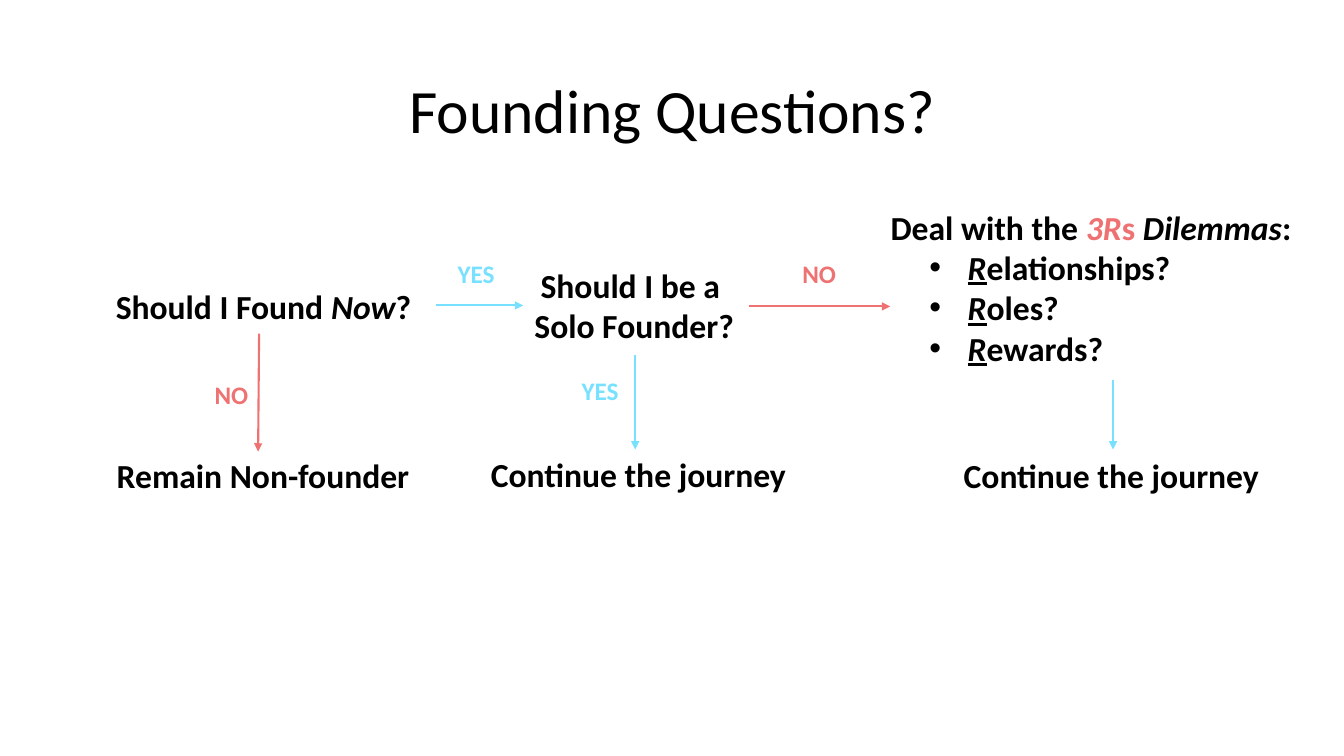
from dataclasses import dataclass

from pptx import Presentation
from pptx.dml.color import RGBColor
from pptx.enum.shapes import MSO_CONNECTOR
from pptx.enum.text import MSO_ANCHOR, MSO_AUTO_SIZE, PP_ALIGN
from pptx.oxml.ns import qn
from pptx.util import Pt
from lxml.etree import SubElement

EMU_PER_PX = 9144


@dataclass(frozen=True)
class Theme:
    """Colours, font and type sizes of the slide."""
    font: str = "Calibri"
    ink: RGBColor = RGBColor(0x00, 0x00, 0x00)
    yes: RGBColor = RGBColor(0x77, 0xE1, 0xFF)
    no: RGBColor = RGBColor(0xEF, 0x72, 0x73)
    title_size: int = 44
    step_size: int = 24
    answer_size: int = 18
    arrow_width: float = 1.5


class FlowSlide:
    """Draws the parts of a decision flow on one slide."""

    def __init__(self, slide, theme):
        """Keep the slide and its style."""
        self.slide = slide
        self.theme = theme

    def box(self, left, top, width, height, wrap=False):
        """Add an empty text box and return its text frame."""
        lengths = [length * EMU_PER_PX for length in (left, top, width, height)]
        frame = self.slide.shapes.add_textbox(*lengths).text_frame
        frame.word_wrap = wrap
        frame.auto_size = MSO_AUTO_SIZE.SHAPE_TO_FIT_TEXT
        return frame

    def style(self, paragraph, size, color, bold=True, align=PP_ALIGN.LEFT):
        """Set the font and alignment of a paragraph."""
        paragraph.alignment = align
        font = paragraph.font
        font.name, font.size, font.bold = self.theme.font, Pt(size), bold
        font.color.rgb = color

    def title(self, text, left, top, width, height):
        """Add the slide title."""
        frame = self.box(left, top, width, height, wrap=True)
        frame.auto_size = MSO_AUTO_SIZE.NONE
        frame.vertical_anchor = MSO_ANCHOR.MIDDLE
        paragraph = frame.paragraphs[0]
        paragraph.text = text
        paragraph.line_spacing = 0.9
        self.style(paragraph, self.theme.title_size, self.theme.ink, False, PP_ALIGN.CENTER)

    def runs(self, paragraph, parts):
        """Add runs given as text, italic, underline and colour."""
        for text, italic, underline, color in parts:
            run = paragraph.add_run()
            run.text = text
            run.font.italic = italic
            run.font.underline = underline
            run.font.color.rgb = color

    def step(self, text, left, top, width, height=50, align=PP_ALIGN.LEFT, emphasis=""):
        """Add a step of the flow, with one emphasised word if given."""
        paragraph = self.box(left, top, width, height).paragraphs[0]
        ink = self.theme.ink
        if emphasis:
            before, after = text.split(emphasis)
            self.runs(paragraph, [(before, False, False, ink), (emphasis, True, False, ink),
                                  (after, False, False, ink)])
        else:
            paragraph.text = text
        self.style(paragraph, self.theme.step_size, ink, align=align)

    def answer(self, text, color, left, top, width):
        """Add the answer beside an arrow."""
        paragraph = self.box(left, top, width, 40).paragraphs[0]
        paragraph.text = text
        self.style(paragraph, self.theme.answer_size, color)

    def dilemmas(self, heading, items, left, top, width, height):
        """Add a heading over bullets with marked initials."""
        frame = self.box(left, top, width, height, wrap=True)
        self.runs(frame.paragraphs[0], heading)
        self.style(frame.paragraphs[0], self.theme.step_size, self.theme.ink,
                   align=PP_ALIGN.CENTER)
        for item in items:
            paragraph = frame.add_paragraph()
            paragraph.level = 1
            self.runs(paragraph, [(item[0], True, True, self.theme.ink),
                                  (item[1:], False, False, self.theme.ink)])
            self.style(paragraph, self.theme.step_size, self.theme.ink)
            self.bullet(paragraph, 88, -38)

    def bullet(self, paragraph, margin, indent):
        """Give a paragraph a round bullet and a hanging indent."""
        properties = paragraph._p.get_or_add_pPr()
        properties.set("marL", str(margin * EMU_PER_PX))
        properties.set("indent", str(indent * EMU_PER_PX))
        font = properties.makeelement(qn("a:buFont"), {"typeface": "Arial"})
        mark = properties.makeelement(qn("a:buChar"), {"char": "•"})
        properties.find(qn("a:defRPr")).addprevious(font)
        font.addnext(mark)

    def arrow(self, color, *ends):
        """Add an arrow through start x, start y, end x, end y."""
        points = [end * EMU_PER_PX for end in ends]
        connector = self.slide.shapes.add_connector(MSO_CONNECTOR.STRAIGHT, *points)
        connector.line.color.rgb = color
        connector.line.width = Pt(self.theme.arrow_width)
        SubElement(connector.line._get_or_add_ln(), qn("a:tailEnd"), type="triangle")
        SubElement(connector._element.spPr, qn("a:effectLst"))


def main():
    """Build and save the slide."""
    presentation = Presentation()
    presentation.slide_width = 1333 * EMU_PER_PX
    presentation.slide_height = 750 * EMU_PER_PX
    theme = Theme()
    flow = FlowSlide(presentation.slides.add_slide(presentation.slide_layouts[6]), theme)

    flow.title("Founding Questions?", 92, 40, 1150, 145)
    flow.step("Should I Found Now?", 105, 279, 316, emphasis="Now")
    flow.step("Remain Non-founder", 106, 446, 313)
    flow.step("Should I be a \vSolo Founder?", 519, 258, 220, 91, PP_ALIGN.CENTER)
    flow.step("Continue the journey", 477, 445, 316)
    flow.step("Continue the journey", 946, 446, 316)

    heading = [("Deal with the ", False, False, theme.ink), ("3R", True, False, theme.no),
               ("s ", False, False, theme.no), ("Dilemmas", True, False, theme.ink),
               (":", False, False, theme.ink)]
    flow.dilemmas(heading, ["Relationships?", "Roles?", "Rewards?"], 862, 200, 440, 172)

    for left, top in [(444, 251), (567, 367)]:
        flow.answer("YES", theme.yes, left, top, 57)
    for left, top in [(203, 371), (786, 251)]:
        flow.answer("NO", theme.no, left, top, 54)

    for ends in [(432, 303, 519, 303), (630, 352, 630, 446), (1104, 377, 1104, 446)]:
        flow.arrow(theme.yes, *ends)
    for ends in [(257, 331, 256, 448), (743, 304, 883, 304)]:
        flow.arrow(theme.no, *ends)

    presentation.save("out.pptx")


if __name__ == "__main__":
    main()
